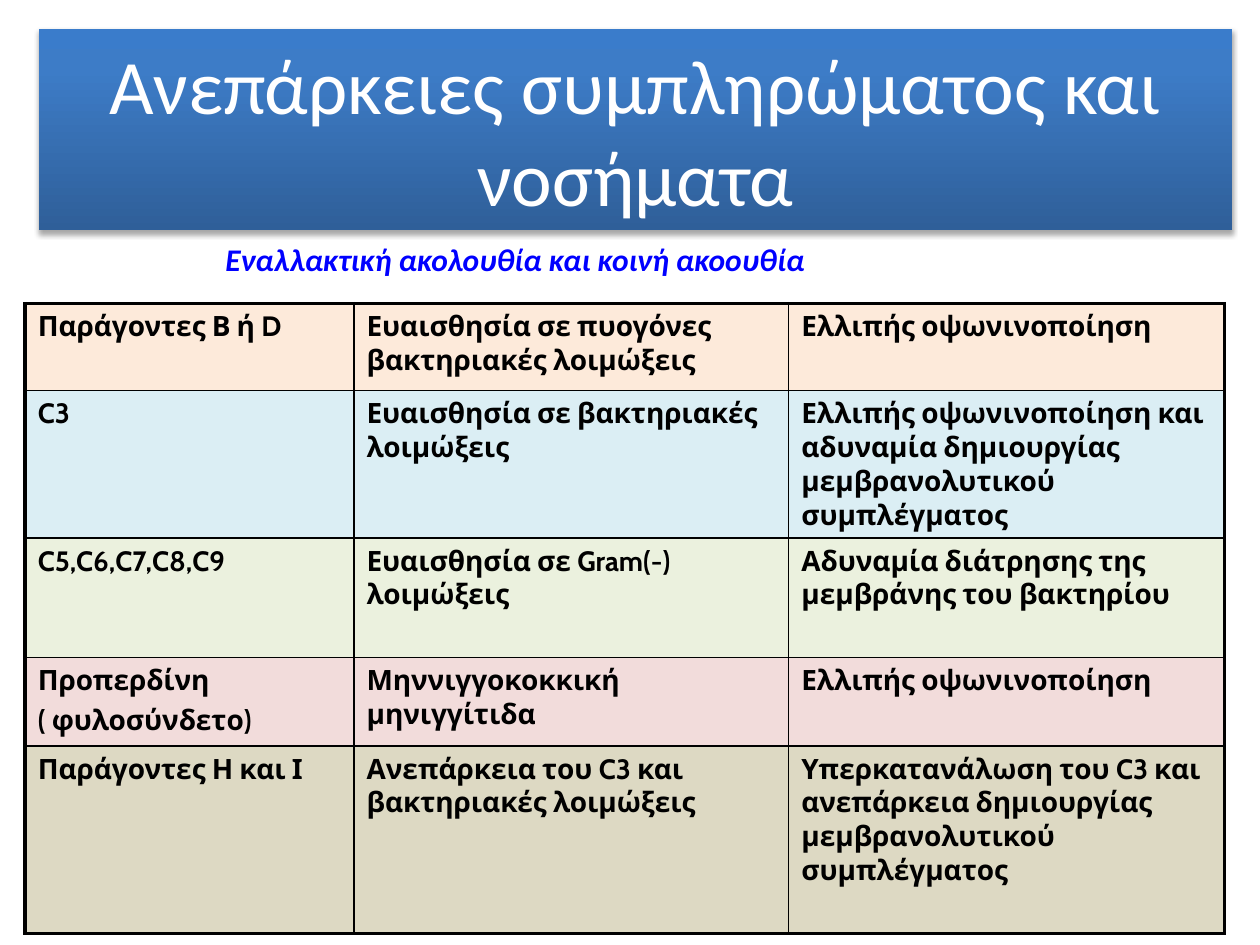
from dataclasses import dataclass

from lxml import etree
from pptx import Presentation
from pptx.dml.color import RGBColor
from pptx.enum.shapes import MSO_SHAPE
from pptx.enum.text import MSO_ANCHOR, PP_ALIGN
from pptx.oxml import parse_xml
from pptx.oxml.ns import qn
from pptx.util import Inches, Pt

RECTANGLE = MSO_SHAPE.RECTANGLE
MIDDLE, TOP = MSO_ANCHOR.MIDDLE, MSO_ANCHOR.TOP
CENTER, LEFT = PP_ALIGN.CENTER, PP_ALIGN.LEFT
DRAWING = 'xmlns:a="http://schemas.openxmlformats.org/drawingml/2006/main"'


@dataclass(frozen=True)
class Theme:
    black: str = "000000"
    white: str = "FFFFFF"
    blue: str = "0000FF"
    banner: tuple = ((0, "2F5F99"), (80, "3D7CC7"), (100, "3A7CCB"))
    rows: tuple = ("FDEADA", "DBEEF4", "EBF1DE", "F2DCDB", "DDD9C3")
    title_size: int = 44
    subtitle_size: int = 18
    cell_size: int = 16
    inner_line: float = 1
    outer_line: float = 2.25


THEME = Theme()


def write(para, text, color, align=LEFT, before=0, **font_values):
    para.alignment = align
    para.space_before = Pt(before)
    span = para.add_run()
    span.text = text
    span.font.color.rgb = RGBColor.from_string(color)
    for name, value in font_values.items():
        setattr(span.font, name, value)


def add_border(cell, side, width):
    properties = cell._tc.get_or_add_tcPr()
    line = etree.SubElement(properties, qn(f"a:ln{side}"), w=str(Pt(width)))
    fill = etree.SubElement(line, qn("a:solidFill"))
    etree.SubElement(fill, qn("a:srgbClr"), val=THEME.black)


deck = Presentation()
deck.slide_width, deck.slide_height = Inches(10), Inches(7.5)
page = deck.slides.add_slide(deck.slide_layouts[6])

# Title banner with a vertical gradient and a soft shadow
banner = page.shapes.add_shape(
    RECTANGLE, Inches(0.31), Inches(0.23), Inches(9.47), Inches(1.6))
banner.line.fill.background()
stops = "".join(
    f'<a:gs pos="{position * 1000}"><a:srgbClr val="{color}"/></a:gs>'
    for position, color in THEME.banner)
gradient = parse_xml(
    f'<a:gradFill {DRAWING} rotWithShape="1"><a:gsLst>{stops}</a:gsLst>'
    '<a:lin ang="16200000" scaled="0"/></a:gradFill>')
shadow = parse_xml(
    f'<a:effectLst {DRAWING}><a:outerShdw blurRad="{Pt(3.1)}" dist="{Pt(1.8)}" '
    f'dir="5400000" rotWithShape="0"><a:srgbClr val="{THEME.black}">'
    '<a:alpha val="35000"/></a:srgbClr></a:outerShdw></a:effectLst>')
banner_properties = banner.fill._xPr
banner_properties.find(qn("a:prstGeom")).addnext(gradient)
banner_properties.append(shadow)
banner.text_frame.word_wrap = True
banner.text_frame.vertical_anchor = MIDDLE
write(banner.text_frame.paragraphs[0], "Ανεπάρκειες συμπληρώματος και νοσήματα",
      THEME.white, CENTER, size=Pt(THEME.title_size), name="Calibri")

# Subtitle
box = page.shapes.add_textbox(Inches(1.69), Inches(1.86), Inches(7.4), Inches(0.44))
box.text_frame.word_wrap = True
write(box.text_frame.paragraphs[0], "Εναλλακτική ακολουθία και κοινή ακοουθία",
      THEME.blue, before=9, size=Pt(THEME.subtitle_size), name="Calibri",
      bold=True, italic=True)

# Table: factor, disease, mechanism
content = [
    ("Παράγοντες Β ή D", "Ευαισθησία σε πυογόνες βακτηριακές λοιμώξεις",
     "Ελλιπής οψωνινοποίηση"),
    ("C3", "Ευαισθησία σε βακτηριακές λοιμώξεις",
     "Ελλιπής οψωνινοποίηση και αδυναμία δημιουργίας μεμβρανολυτικού συμπλέγματος"),
    ("C5,C6,C7,C8,C9", "Ευαισθησία σε Gram(-) λοιμώξεις",
     "Αδυναμία διάτρησης της μεμβράνης του βακτηρίου"),
    ("Προπερδίνη\n( φυλοσύνδετο)", "Μηννιγγοκοκκική μηνιγγίτιδα",
     "Ελλιπής οψωνινοποίηση"),
    ("Παράγοντες Η και Ι", "Ανεπάρκεια του C3 και βακτηριακές λοιμώξεις",
     "Υπερκατανάλωση του C3 και ανεπάρκεια δημιουργίας μεμβρανολυτικού συμπλέγματος"),
]
widths = [2.61, 3.45, 3.46]
heights = [0.69, 1.17, 0.95, 0.7, 1.49]
cell_format = {
    "margin_left": Inches(0.1), "margin_right": Inches(0.1),
    "margin_top": Inches(0.05), "margin_bottom": Inches(0.05),
    "vertical_anchor": TOP,
}
table = page.shapes.add_table(
    len(heights), len(widths), Inches(0.2), Inches(2.41),
    Inches(sum(widths)), Inches(sum(heights))).table
table.first_row = table.horz_banding = False
for column, width in zip(table.columns, widths):
    column.width = Inches(width)

for r, (row, height) in enumerate(zip(table.rows, heights)):
    row.height = Inches(height)
    for c, cell in enumerate(row.cells):
        for name, value in cell_format.items():
            setattr(cell, name, value)
        for i, text in enumerate(content[r][c].split("\n")):
            frame = cell.text_frame
            para = frame.add_paragraph() if i else frame.paragraphs[0]
            write(para, text, THEME.black, before=3.2, size=Pt(THEME.cell_size),
                  name="Cabin", bold=True)
        # Borders come before the fill; the outer frame is heavier
        outer_sides = {"L": c == 0, "R": c == len(widths) - 1,
                       "T": r == 0, "B": r == len(heights) - 1}
        for side, outer in outer_sides.items():
            add_border(cell, side, THEME.outer_line if outer else THEME.inner_line)
        cell.fill.solid()
        cell.fill.fore_color.rgb = RGBColor.from_string(THEME.rows[r])

deck.save("out.pptx")
